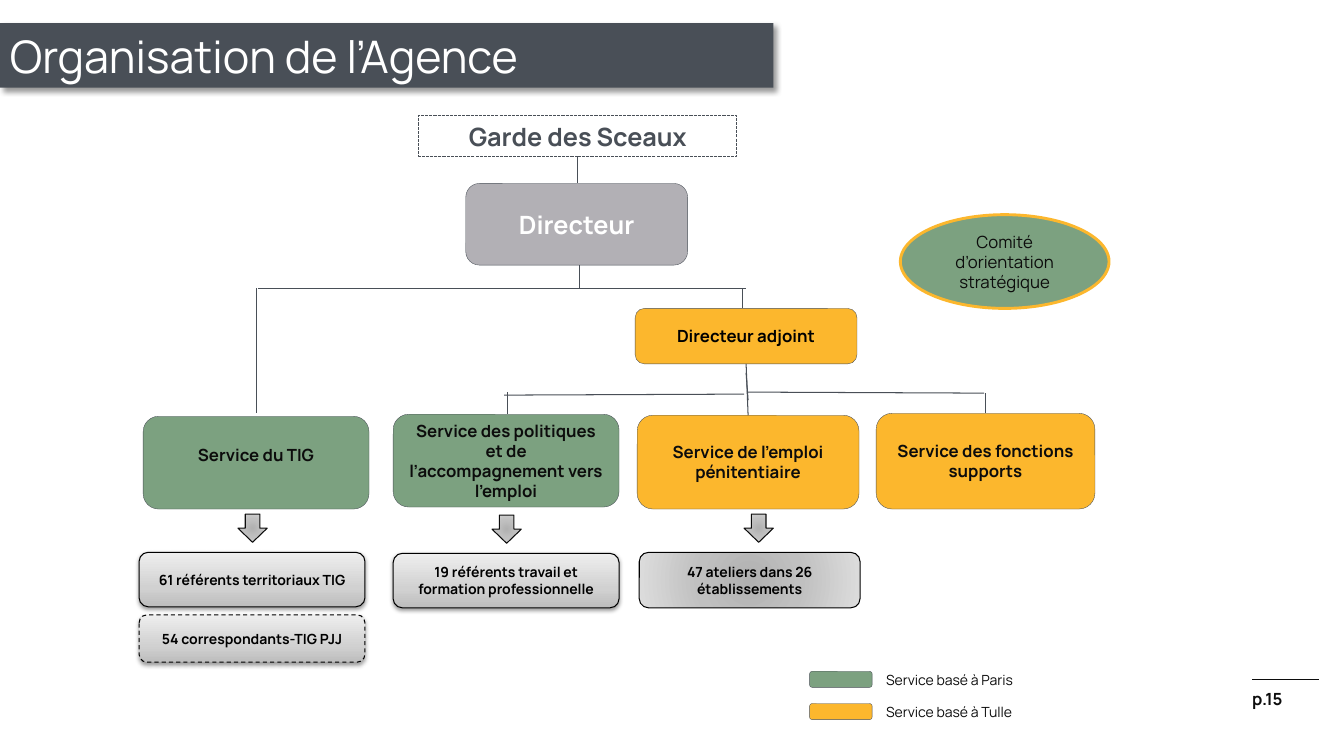
from pptx import Presentation
from pptx.dml.color import RGBColor
from pptx.enum.dml import MSO_LINE as Dash
from pptx.enum.shapes import MSO_CONNECTOR as Link, MSO_SHAPE as Form
from pptx.enum.text import MSO_ANCHOR as Anchor, PP_ALIGN as Align
from pptx.oxml import parse_xml
from pptx.oxml.ns import nsdecls, qn
from pptx.util import Pt

PX = 9144  # 100 px to the inch
FONT = "Manrope"
SLATE, INK, BLACK, WHITE = "494F57", "0C0C0C", "000000", "FFFFFF"
GREEN, AMBER, GREY = "7CA180", "FCB72D", "B2B0B5"

GLOW = ([(0, "B1B1B1"), (45, "C0C0C0"), (100, "DDDDDD")],
        '<a:path path="circle"><a:fillToRect l="100000" t="100000" '
        'r="100000" b="100000"/></a:path>')
SHEEN = ([(0, "BDBDBD"), (35, "D1D1D1"), (100, "EEEEEE")],
         '<a:lin ang="16200000" scaled="0"/>')
# opacity %, blur pt, distance pt, angle
TITLE_SHADE = (40, 4, 3, 45)
TEAM_SHADE = (38, 3.1, 1.6, 90)


def color(code):
    return RGBColor.from_string(code)


def place(box, x, y, w, h):
    """Turn px relative to the box into EMU."""
    return [n * PX for n in (box[0] + x, box[1] + y, w, h)]


def write(shape, text, size, ink=INK, bold=False, align=Align.CENTER,
          anchor=Anchor.MIDDLE, **insets):
    frame = shape.text_frame
    frame.word_wrap = True
    frame.vertical_anchor = anchor
    for side, gap in insets.items():
        setattr(frame, f"margin_{side}", gap * PX)
    para = frame.paragraphs[0]
    para.alignment = align
    run = para.add_run()
    run.text = text
    look = {"name": FONT, "size": Pt(size), "bold": bold}
    for key, value in look.items():
        setattr(run.font, key, value)
    run.font.color.rgb = color(ink)


def shade(shape, alpha, blur, dist, angle):
    effects = shape._element.spPr.find(qn("a:effectLst"))
    effects.append(parse_xml(
        f'<a:outerShdw {nsdecls("a")} blurRad="{Pt(blur)}" dist="{Pt(dist)}" '
        f'dir="{angle * 60000}" algn="tl" rotWithShape="0">'
        f'<a:srgbClr val="{BLACK}"><a:alpha val="{alpha * 1000}"/></a:srgbClr>'
        '</a:outerShdw>'))


def blend(shape, stops, course):
    marks = "".join(f'<a:gs pos="{pos * 1000}"><a:srgbClr val="{code}"/></a:gs>'
                    for pos, code in stops)
    shape._element.spPr.find(qn("a:prstGeom")).addnext(parse_xml(
        f'<a:gradFill {nsdecls("a")} rotWithShape="1"><a:gsLst>{marks}</a:gsLst>'
        f'{course}</a:gradFill>'))


def draw(slide, form, spot, fill=None, line=None, width=0.25, dash=None,
         shadow=None):
    shape = slide.shapes.add_shape(form, *spot)
    shape.shadow.inherit = False
    if fill is None:
        shape.fill.background()
    elif isinstance(fill, str):
        shape.fill.solid()
        shape.fill.fore_color.rgb = color(fill)
    else:
        blend(shape, *fill)
    if line:
        shape.line.color.rgb = color(line)
        shape.line.width = Pt(width)
        if dash:
            shape.line.dash_style = dash
    else:
        shape.line.fill.background()
    if shadow:
        shade(shape, *shadow)
    return shape


def link(slide, box, x1, y1, x2, y2, ink=SLATE, width=0.75):
    left, top = box[:2]
    ends = [n * PX for n in (left + x1, top + y1, left + x2, top + y2)]
    line = slide.shapes.add_connector(Link.STRAIGHT, *ends)
    line.line.color.rgb = color(ink)
    line.line.width = Pt(width)
    line._element.spPr.append(parse_xml(f'<a:effectLst {nsdecls("a")}/>'))


def title(slide, box):
    bar = draw(slide, Form.RECTANGLE, place(box, 0, 0, *box[2:]), SLATE,
               shadow=TITLE_SHADE)
    write(bar, "Organisation de l’Agence", 32, WHITE, align=Align.LEFT)


def heads(slide, box):
    """Minister, directors and advisory committee."""
    garde = draw(slide, Form.RECTANGLE, place(box, 277, 0, 316, 40),
                 line=SLATE, width=0.75, dash=Dash.SQUARE_DOT)
    write(garde, "Garde des Sceaux", 18, SLATE, True, anchor=Anchor.TOP)
    for text, spot, fill, size, ink in (
            ("Directeur", (324, 67, 220, 81), GREY, 18, WHITE),
            ("Directeur adjoint", (492, 191, 220, 55), AMBER, 12, BLACK)):
        card = draw(slide, Form.ROUNDED_RECTANGLE, place(box, *spot), fill, SLATE)
        write(card, text, size, ink, True)
    board = draw(slide, Form.OVAL, place(box, 755, 98, 207, 93), GREEN, AMBER, 2.08)
    write(board, "Comité d’orientation stratégique", 12)


def services(slide, box):
    for text, spot, fill, base in (
            ("Service du TIG", (4, 298, 224, 92), GREEN, 20),
            ("Service des politiques et de l’accompagnement vers l’emploi",
             (252, 296, 224, 92), GREEN, 5),
            ("Service de l’emploi pénitentiaire", (494, 297, 220, 93), AMBER, 5),
            ("Service des fonctions supports", (731, 295, 217, 95), AMBER, 5)):
        card = draw(slide, Form.ROUNDED_RECTANGLE, place(box, *spot), fill, SLATE)
        write(card, text, 12, bold=True, bottom=base)


def teams(slide, box):
    for x, y in ((98, 395), (350, 396), (600, 395)):
        draw(slide, Form.DOWN_ARROW, place(box, x, y, 29, 28), GLOW, INK, 0.75)
    for text, spot, fill, shadow, dash in (
            ("61 référents territoriaux TIG", (0, 433, 224, 54),
             SHEEN, TEAM_SHADE, None),
            ("54 correspondants-TIG PJJ", (0, 495, 224, 47),
             SHEEN, TEAM_SHADE, Dash.DASH),
            ("19 référents travail et formation professionnelle",
             (252, 434, 224, 54), SHEEN, TEAM_SHADE, None),
            ("47 ateliers dans 26 établissements", (496, 433, 219, 55),
             GLOW, None, None)):
        card = draw(slide, Form.ROUNDED_RECTANGLE, place(box, *spot), fill,
                    BLACK, 0.75, dash, shadow)
        write(card, text, 10, BLACK, True)


def links(slide, box):
    for ends in (
            (435, 41, 435, 67), (437, 148, 437, 171),
            (118, 171, 437, 171), (437, 171, 602, 171),
            (116, 171, 116, 295), (598, 171, 598, 191),
            (602, 246, 604, 297), (602, 255, 604, 282),
            (362, 277, 600, 276), (603, 274, 838, 275),
            (365, 274, 365, 296), (839, 275, 839, 295)):
        link(slide, box, *ends)


def legend(slide, box):
    for row, (town, fill) in enumerate((("Paris", GREEN), ("Tulle", AMBER))):
        y = row * 32
        draw(slide, Form.ROUNDED_RECTANGLE, place(box, 0, y + 5, 62, 16),
             fill, SLATE)
        label = slide.shapes.add_textbox(*place(box, 66, y, 150, 27))
        write(label, f"Service basé à {town}", 10, align=Align.LEFT,
              anchor=Anchor.TOP)


def folio(slide, box):
    link(slide, box, 0, 0, box[2], 0, INK, 1)
    label = slide.shapes.add_textbox(*place(box, 0, 9, box[2], 20))
    write(label, "p.15", 12, bold=True, align=Align.LEFT, anchor=Anchor.TOP,
          left=0, top=0, right=0, bottom=0)


def main():
    deck = Presentation()
    deck.slide_width, deck.slide_height = 1333 * PX, 750 * PX
    slide = deck.slides.add_slide(deck.slide_layouts[6])
    folio(slide, (1242, 674, 66, 29))
    title(slide, (0, 23, 767, 64))
    tree = (138, 115, 962, 542)
    for part in (heads, services, teams, links):
        part(slide, tree)
    legend(slide, (803, 661, 216, 59))
    deck.save("out.pptx")


if __name__ == "__main__":
    main()
